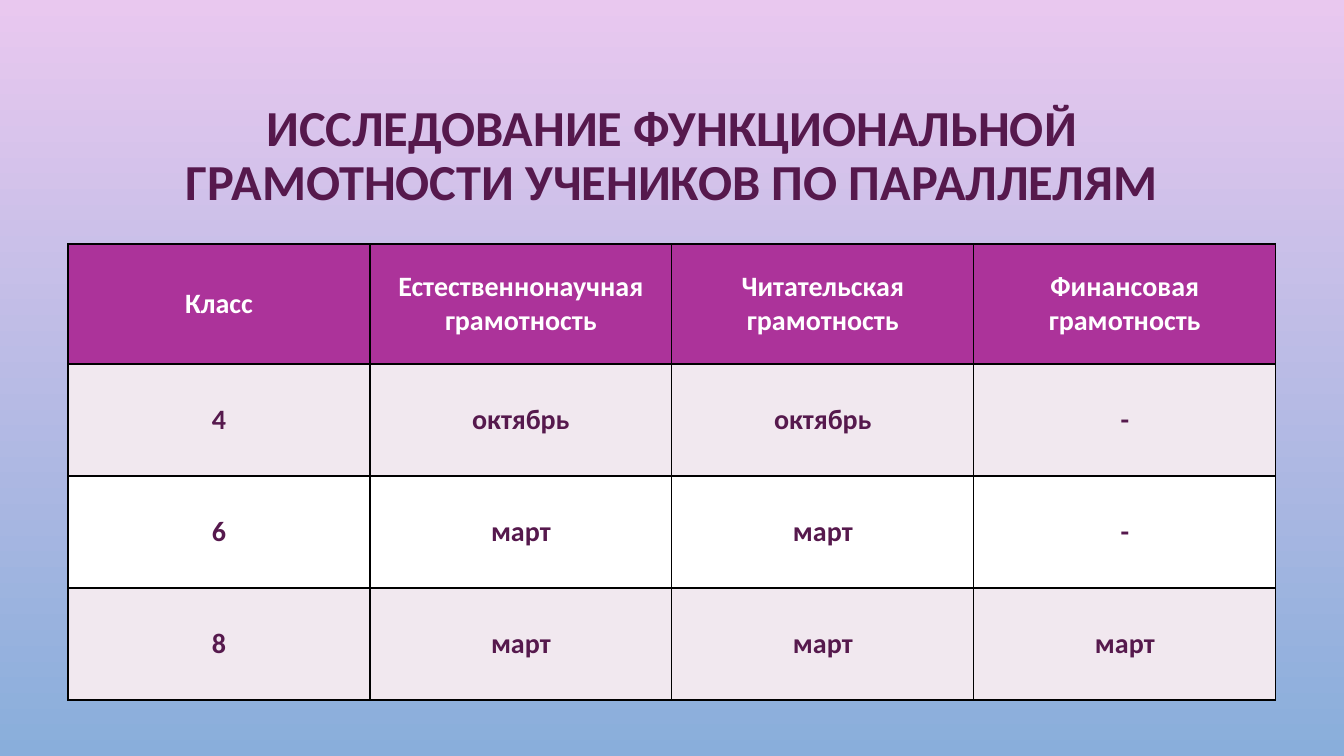
from lxml import etree
from pptx import Presentation
from pptx import util as u
from pptx.dml.color import RGBColor
from pptx.enum import text
from pptx.oxml import ns

COLORS = {
    "sky_top": "E9C8EF",
    "sky_bottom": "89AEDB",
    "plum": "56194D",
    "header": "AC339A",
    "band": "F1E8EF",
    "white": "FFFFFF",
    "border": "000000",
}


def px(length):
    return u.Inches(length / 100.8)


def write(frame, content, *, size, color, spacing=1.0):
    for index, line in enumerate(content.split("\n")):
        para = frame.paragraphs[0] if index == 0 else frame.add_paragraph()
        para.alignment = text.PP_ALIGN.CENTER
        para.line_spacing = spacing
        span = para.add_run()
        span.text = line
        span.font.name = "Calibri"
        span.font.size = u.Pt(size)
        span.font.bold = True
        span.font.color.rgb = RGBColor.from_string(COLORS[color])


deck = Presentation()
deck.slide_width, deck.slide_height = px(1344), px(756)
page = deck.slides.add_slide(deck.slide_layouts[6])

backdrop = page.background.fill
backdrop.gradient()
backdrop.gradient_angle = 270
for stop, name in zip(backdrop.gradient_stops, ["sky_top", "sky_bottom"]):
    stop.color.rgb = RGBColor.from_string(COLORS[name])
backdrop.gradient_stops[0].position = 0
backdrop.gradient_stops[1].position = 1

title = page.shapes.add_textbox(px(101), px(69), px(1142), px(176)).text_frame
title.word_wrap = True
title.vertical_anchor = text.MSO_ANCHOR.MIDDLE
write(
    title,
    "ИССЛЕДОВАНИЕ ФУНКЦИОНАЛЬНОЙ ГРАМОТНОСТИ УЧЕНИКОВ ПО ПАРАЛЛЕЛЯМ",
    size=36,
    color="plum",
    spacing=0.9,
)

schedule = [
    ["Класс", "Естественнонаучная\nграмотность", "Читательская\nграмотность", "Финансовая грамотность"],
    ["4", "октябрь", "октябрь", "-"],
    ["6", "март", "март", "-"],
    ["8", "март", "март", "март"],
]
row_fills = ["header", "band", "white", "band"]
row_heights = [120, 112, 112, 112]

table = page.shapes.add_table(4, 4, px(68), px(244), px(1208), px(456)).table
for column in table.columns:
    column.width = px(302)

for r, values in enumerate(schedule):
    table.rows[r].height = px(row_heights[r])
    for c, value in enumerate(values):
        cell = table.cell(r, c)
        cell.vertical_anchor = text.MSO_ANCHOR.MIDDLE
        write(cell.text_frame, value, size=20, color="plum" if r else "white")
        properties = cell._tc.get_or_add_tcPr()
        for side in ["lnL", "lnR", "lnT", "lnB"]:
            line = etree.SubElement(properties, ns.qn(f"a:{side}"), w=str(u.Pt(1)))
            solid = etree.SubElement(line, ns.qn("a:solidFill"))
            etree.SubElement(solid, ns.qn("a:srgbClr"), val=COLORS["border"])
        cell.fill.solid()
        cell.fill.fore_color.rgb = RGBColor.from_string(COLORS[row_fills[r]])

deck.save("out.pptx")
